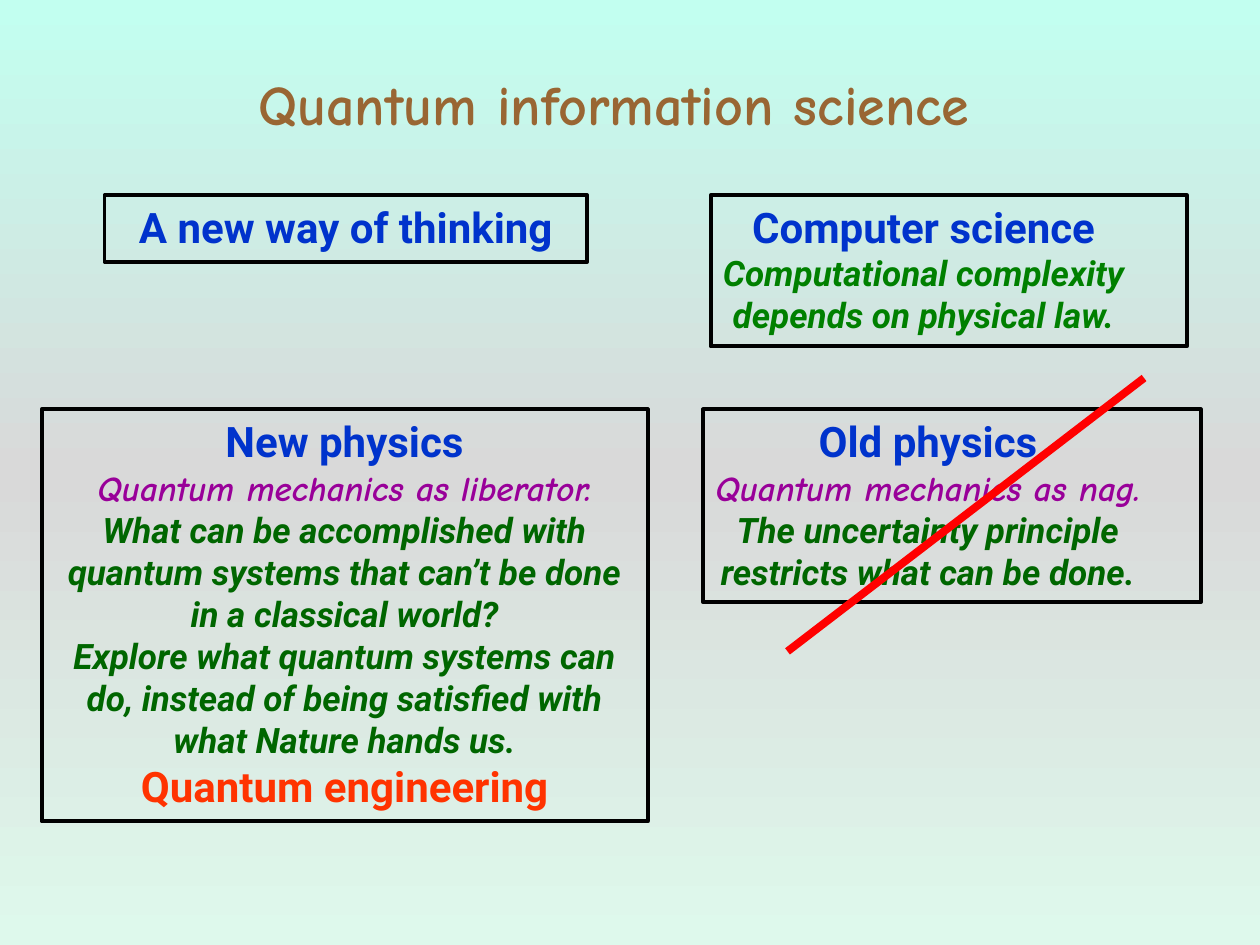
"""Build the quantum information science slide."""
import copy
from dataclasses import dataclass

import pptx
import pptx.dml.color
import pptx.enum.shapes
import pptx.enum.text
import pptx.oxml
import pptx.oxml.ns
import pptx.util
from pptx.dml.color import RGBColor
from pptx.util import Inches

BLACK = RGBColor(0x00, 0x00, 0x00)
BLUE = RGBColor(0x00, 0x33, 0xCC)
BROWN = RGBColor(0x99, 0x66, 0x33)
GREEN = RGBColor(0x00, 0x80, 0x00)
DARK_GREEN = RGBColor(0x00, 0x66, 0x00)
PURPLE = RGBColor(0x99, 0x00, 0x99)
ORANGE = RGBColor(0xFF, 0x33, 0x00)
RED = RGBColor(0xFF, 0x00, 0x00)
BACKGROUND = (
    RGBColor(0xC2, 0xFF, 0xF0),
    RGBColor(0xD9, 0xD9, 0xD9),
    RGBColor(0xDE, 0xF9, 0xEC),
)


@dataclass(frozen=True)
class Style:
    size: int
    color: RGBColor
    font: str = "Roboto"
    italic: bool = False


@dataclass(frozen=True)
class Span:
    text: str
    style: Style


@dataclass(frozen=True)
class Panel:
    left: float
    top: float
    width: float
    height: float
    paragraphs: tuple[tuple[Span, ...], ...]
    margin_left: float = 0.1
    margin_right: float = 0.1


TITLE = Style(32, BROWN, "Comic Neue")
HEADING = Style(24, BLUE)
CLOSING = Style(24, ORANGE)
MOTTO = Style(20, PURPLE, "Comic Neue", True)
BODY = Style(20, DARK_GREEN, italic=True)
COMPLEXITY = Style(20, GREEN, italic=True)

TITLE_PANEL = Panel(1.58, 0.5, 6.75, 0.63, ((Span("Quantum information science ", TITLE),),))
PANELS = (
    Panel(0.83, 1.55, 3.83, 0.53, ((Span("A new way of thinking", HEADING),),)),
    Panel(5.64, 1.55, 3.78, 1.2, (
        (Span("Computer science", HEADING),),
        (Span("Computational complexity", COMPLEXITY),),
        (Span("depends on physical law.", COMPLEXITY),),
    ), 0, 0.4),
    Panel(5.58, 3.25, 3.95, 1.53, (
        (Span("Old physics", HEADING),),
        (Span("Quantum mechanics as nag.", MOTTO),),
        (Span("The uncertainty principle", BODY),),
        (Span("restricts what can be done.", BODY),),
    ), 0, 0.38),
    Panel(0.33, 3.25, 4.81, 3.27, (
        (Span("New physics", HEADING),),
        (
            Span("Quantum mechanics as liberator. ", MOTTO),
            Span("What can be accomplished with quantum systems "
                 "that can’t be done in a classical world?", BODY),
        ),
        (Span("Explore what quantum systems can do, instead of being "
              "satisfied with what Nature hands us.", BODY),),
        (Span("Quantum engineering", CLOSING),),
    )),
)


def paint_background(page: pptx.slide.Slide) -> None:
    fill = page.background.fill
    fill.gradient()
    fill.gradient_angle = 270
    stops = page.element.find(".//" + pptx.oxml.ns.qn("a:gsLst"))
    stops.insert(1, copy.deepcopy(stops[0]))
    for index, (stop, color) in enumerate(zip(fill.gradient_stops, BACKGROUND)):
        stop.position = index / 2
        stop.color.rgb = color


def write_text(box: pptx.shapes.autoshape.Shape, panel: Panel) -> None:
    frame = box.text_frame
    frame.word_wrap = True
    frame.vertical_anchor = pptx.enum.text.MSO_ANCHOR.TOP
    frame.margin_left = Inches(panel.margin_left)
    frame.margin_right = Inches(panel.margin_right)
    for index, spans in enumerate(panel.paragraphs):
        para = frame.add_paragraph() if index else frame.paragraphs[0]
        para.alignment = pptx.enum.text.PP_ALIGN.CENTER
        for span in spans:
            run = para.add_run()
            run.text = span.text
            run.font.name = span.style.font
            run.font.size = pptx.util.Pt(span.style.size)
            run.font.bold = True
            run.font.italic = span.style.italic
            run.font.color.rgb = span.style.color


def place(panel: Panel) -> tuple[pptx.util.Length, ...]:
    return tuple(map(Inches, (panel.left, panel.top, panel.width, panel.height)))


def draw_panel(page: pptx.slide.Slide, panel: Panel) -> None:
    box = page.shapes.add_shape(pptx.enum.shapes.MSO_SHAPE.RECTANGLE, *place(panel))
    box.shadow.inherit = False
    box.fill.background()
    box.line.color.rgb = BLACK
    box.line.width = pptx.util.Pt(2.25)
    write_text(box, panel)


def draw_strike(page: pptx.slide.Slide) -> None:
    strike = page.shapes.add_connector(
        pptx.enum.shapes.MSO_CONNECTOR.STRAIGHT,
        Inches(6.25), Inches(5.17), Inches(9.08), Inches(3),
    )
    strike.line.color.rgb = RED
    strike.line.width = pptx.util.Pt(4.5)
    properties = strike.element.find(pptx.oxml.ns.qn("p:spPr"))
    properties.append(pptx.oxml.parse_xml(
        f"<a:effectLst {pptx.oxml.ns.nsdecls('a')}/>"
    ))


def main() -> None:
    deck = pptx.Presentation()
    deck.slide_width, deck.slide_height = Inches(10), Inches(7.5)
    page = deck.slides.add_slide(deck.slide_layouts[6])
    paint_background(page)
    write_text(page.shapes.add_textbox(*place(TITLE_PANEL)), TITLE_PANEL)
    for panel in PANELS:
        draw_panel(page, panel)
    draw_strike(page)
    deck.save("out.pptx")


if __name__ == "__main__":
    main()
